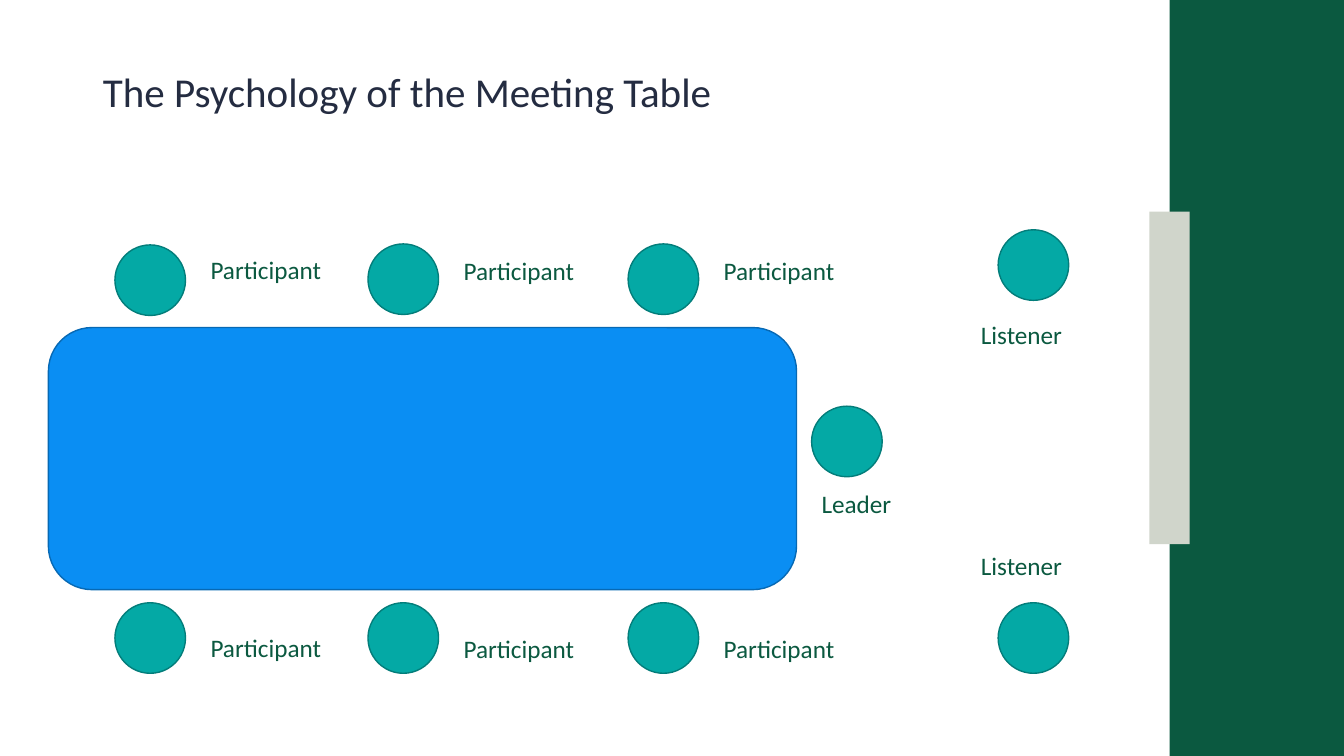
from pptx import Presentation
from pptx.dml.color import RGBColor as RGB
from pptx.enum.shapes import MSO_SHAPE as Kind
from pptx.enum.text import MSO_ANCHOR as Anchor, MSO_AUTO_SIZE as Fit, PP_ALIGN as Align
from pptx.util import Inches, Pt

HUE = {
    "green": "0B5940", "sage": "D0D5CB", "navy": "242C41",
    "blue": "0A8EF3", "rim": "0769B4", "teal": "04A9A5", "edge": "037D7A",
}


def draw(kind, box, fill, line=None):
    shape = slide.shapes.add_shape(kind, *map(Inches, box))
    shape.shadow.inherit = False
    shape.fill.solid()
    shape.fill.fore_color.rgb = RGB.from_string(HUE[fill])
    if line:
        shape.line.color.rgb = RGB.from_string(HUE[line])
        shape.line.width = Pt(1)
    else:
        shape.line.fill.background()


def style(par, size, hue):
    font = par.runs[0].font
    font.name, font.size = "Calibri", Pt(size)
    font.color.rgb = RGB.from_string(HUE[hue])


deck = Presentation()
deck.slide_width, deck.slide_height = Inches(13.33), Inches(7.5)
slide = deck.slides.add_slide(deck.slide_layouts[5])

# Side band
draw(Kind.RECTANGLE, (11.6, 0, 1.73, 7.5), "green")
draw(Kind.RECTANGLE, (11.4, 2.1, 0.4, 3.3), "sage")

# Title
title = slide.shapes.title
title.left, title.top = Inches(0.92), Inches(0.52)
title.width, title.height = Inches(9.55), Inches(0.82)
frame = title.text_frame
frame.text = "The Psychology of the Meeting Table"
frame.auto_size = Fit.NONE
frame.vertical_anchor = Anchor.MIDDLE
par = frame.paragraphs[0]
par.alignment = Align.LEFT
par.line_spacing = 0.9
style(par, 29.3, "navy")

# Meeting table
draw(Kind.ROUNDED_RECTANGLE, (0.48, 3.25, 7.42, 2.6), "blue", "rim")

# Seats: role, seat left and top, label left, top and width
seats = [
    ("Leader", 8.05, 4.03, 8.05, 4.8, 0.97),
    ("Listener", 9.9, 2.28, 9.63, 3.12, 1.09),
    ("Listener", 9.9, 5.98, 9.63, 5.41, 1.09),
]
for x, drop in ((1.14, 0.01), (3.65, 0), (6.23, 0)):
    seats.append(("Participant", x, 2.42 + drop, x + 0.85, 2.48 - drop, 1.43))
    seats.append(("Participant", x, 5.98, x + 0.85, 6.23 - drop, 1.43))

for role, x, y, left, top, width in seats:
    draw(Kind.OVAL, (x, y, 0.7, 0.7), "teal", "edge")
    label = slide.shapes.add_textbox(*map(Inches, (left, top, width, 0.4)))
    label.text_frame.text = role
    label.text_frame.word_wrap = True
    label.text_frame.auto_size = Fit.SHAPE_TO_FIT_TEXT
    style(label.text_frame.paragraphs[0], 18, "green")

deck.save("out.pptx")
